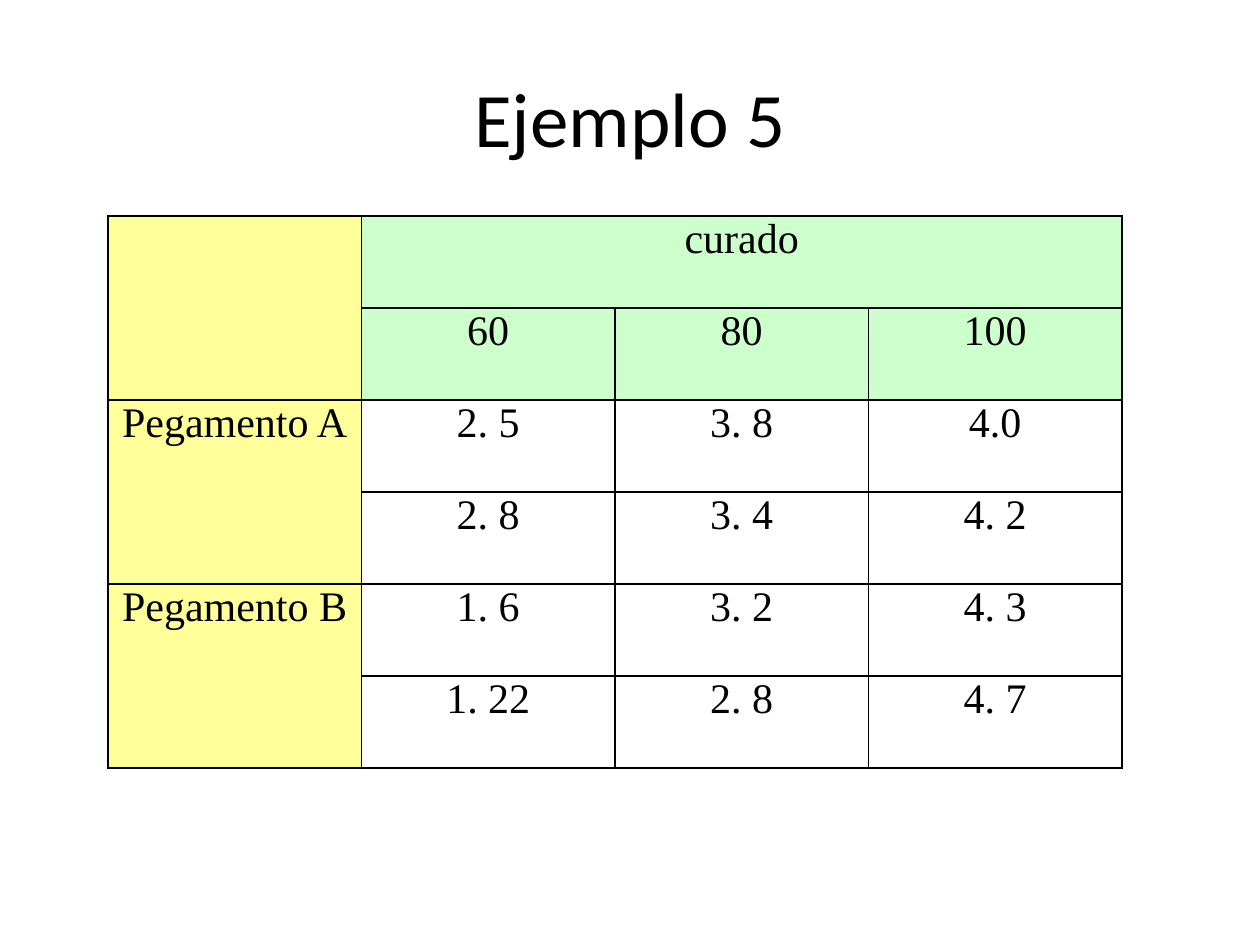
from lxml.etree import SubElement
from pptx import Presentation
from pptx.dml.color import RGBColor
from pptx.enum.text import MSO_ANCHOR, PP_ALIGN
from pptx.oxml.ns import qn
from pptx.util import Emu, Pt

PX_PER_INCH = 126
BLACK, YELLOW, GREEN = "000000", "FFFF99", "CCFFCC"
CELL_FORMAT = {
    "margin_left": 9,
    "margin_right": 9,
    "margin_top": 0,
    "margin_bottom": 0,
}
RESULTS = [
    ["", "curado", "", ""],
    ["", "60", "80", "100"],
    ["Pegamento A", "2. 5", "3. 8", "4.0"],
    ["", "2. 8", "3. 4", "4. 2"],
    ["Pegamento B", "1. 6", "3. 2", "4. 3"],
    ["", "1. 22", "2. 8", "4. 7"],
]
# first row, first column, last row, last column
MERGES = [(0, 0, 1, 0), (0, 1, 0, 3), (2, 0, 3, 0), (4, 0, 5, 0)]


def px(length):
    return Emu(round(length * 914400 / PX_PER_INCH))


def color(hex_value):
    return RGBColor.from_string(hex_value)


def format_text(frame, text, font_name, size):
    frame.text = text
    paragraph = frame.paragraphs[0]
    paragraph.alignment = PP_ALIGN.CENTER
    for font in [paragraph.font] + [run.font for run in paragraph.runs]:
        for name, value in {"name": font_name, "size": Pt(size)}.items():
            setattr(font, name, value)
        font.color.rgb = color(BLACK)


def add_borders(cell):
    properties = cell._tc.get_or_add_tcPr()
    for side in ("lnL", "lnR", "lnT", "lnB"):
        line = SubElement(properties, qn(f"a:{side}"), w=str(Pt(1)))
        fill = SubElement(line, qn("a:solidFill"))
        SubElement(fill, qn("a:srgbClr"), val=BLACK)


def fill_cell(cell, row, column):
    """Yellow for the adhesive column, green for the curing header."""
    if column == 0 or row < 2:
        cell.fill.solid()
        cell.fill.fore_color.rgb = color(YELLOW if column == 0 else GREEN)
    else:
        cell.fill.background()


def add_title(slide, text):
    title = slide.shapes.title
    position = {"left": 63, "top": 38, "width": 1134, "height": 157}
    for name, value in position.items():
        setattr(title, name, px(value))
    format_text(title.text_frame, text, "Calibri", 44)
    title.text_frame.vertical_anchor = MSO_ANCHOR.MIDDLE


def add_results_table(slide):
    table = slide.shapes.add_table(
        len(RESULTS), len(RESULTS[0]), px(108), px(216), px(1014), px(552)
    ).table
    table.first_row = table.horz_banding = False
    for row, values in enumerate(RESULTS):
        for column, value in enumerate(values):
            cell = table.cell(row, column)
            for name, margin in CELL_FORMAT.items():
                setattr(cell, name, px(margin))
            add_borders(cell)
            fill_cell(cell, row, column)
            format_text(cell.text_frame, value, "Times New Roman", 24)
    for top, left, bottom, right in MERGES:
        table.cell(top, left).merge(table.cell(bottom, right))


def main():
    presentation = Presentation()
    presentation.slide_width, presentation.slide_height = px(1260), px(945)
    slide = presentation.slides.add_slide(presentation.slide_layouts[5])
    add_title(slide, "Ejemplo 5")
    add_results_table(slide)
    presentation.save("out.pptx")


if __name__ == "__main__":
    main()
